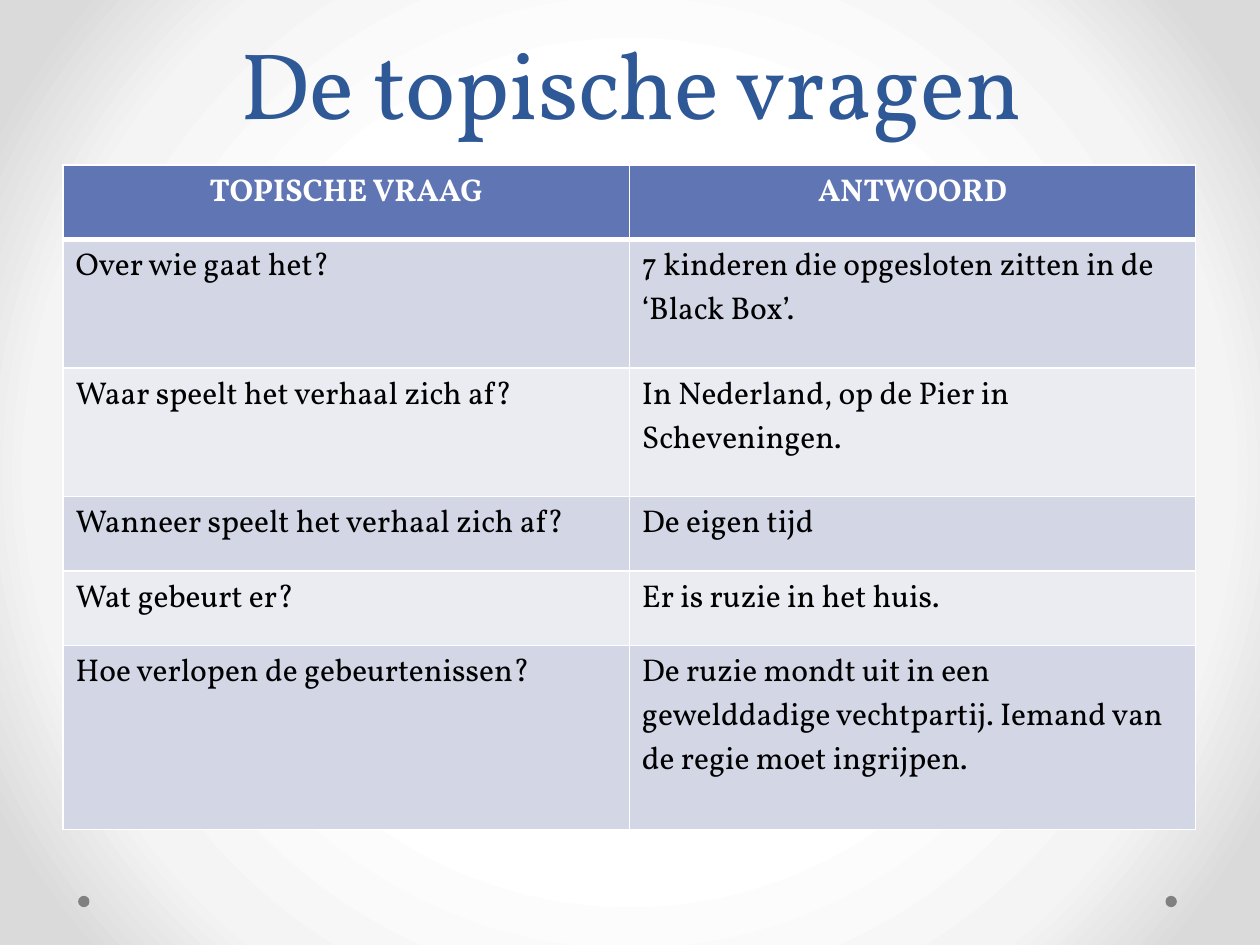
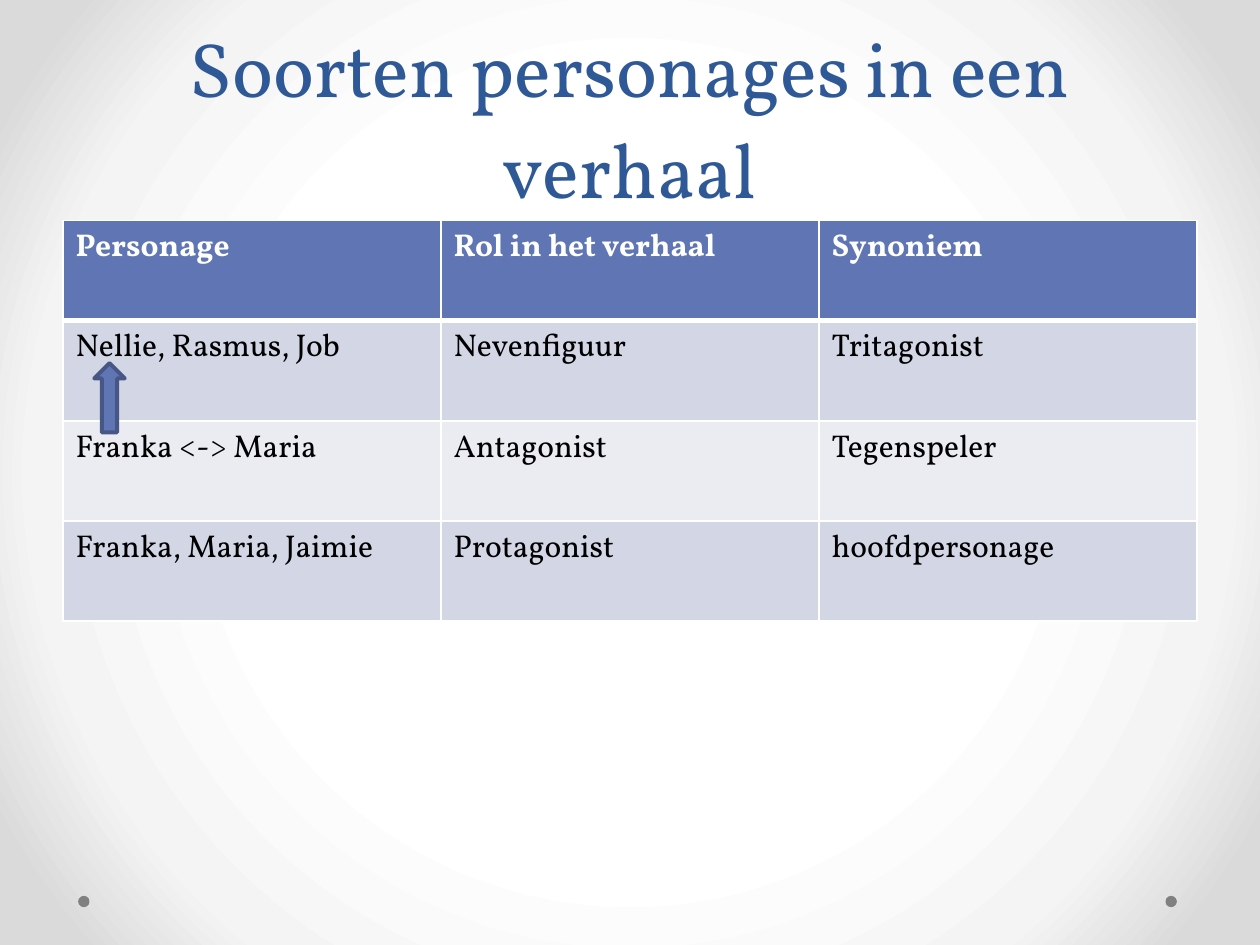
from collections import namedtuple

from lxml.etree import SubElement
from pptx import Presentation
from pptx.dml.color import RGBColor
from pptx.enum.shapes import MSO_SHAPE
from pptx.enum.text import MSO_ANCHOR, PP_ALIGN
from pptx.oxml import parse_xml
from pptx.oxml.ns import nsdecls, qn
from pptx.util import Inches, Pt

WIDTH, HEIGHT = Inches(10), Inches(7.5)
FONT = "Vollkorn"
TITLE_BLUE, HEADER_BLUE, ARROW_EDGE = "2F5897", "6076B4", "475785"
BANDS = ("D2D6E5", "EAECF2")
WHITE, BLACK, DOT_GREY = "FFFFFF", "000000", "808080"
GLOW = ((50, WHITE), (76, "F4F4F4"), (92, "DADADA"))

Box = namedtuple("Box", "left top width height")


def color(hex_code):
    return RGBColor.from_string(hex_code)


def percent_box(left, top, width, height):
    return Box(*(int(share * side / 100) for share, side in
                 zip((left, top, width, height), (WIDTH, HEIGHT) * 2)))


def box_within(outer, left, top, width, height):
    return Box(outer.left + int(outer.width * left / 100),
               outer.top + int(outer.height * top / 100),
               int(outer.width * width / 100),
               int(outer.height * height / 100))


def style_text(paragraph, size, hex_code, bold=False, align=PP_ALIGN.LEFT):
    paragraph.alignment = align
    font = paragraph.font
    font.name, font.size, font.bold = FONT, Pt(size), bold
    font.color.rgb = color(hex_code)


def add_filled_shape(slide, kind, box, fill, edge=None, edge_width=0):
    shape = slide.shapes.add_shape(kind, *box)
    shape.shadow.inherit = False
    shape.fill.solid()
    shape.fill.fore_color.rgb = color(fill)
    if edge:
        shape.line.color.rgb = color(edge)
        shape.line.width = Pt(edge_width)
    else:
        shape.line.fill.background()


def add_background(slide):
    stops = "".join(f'<a:gs pos="{position * 1000}"><a:srgbClr val="{tone}"/></a:gs>'
                    for position, tone in GLOW)
    slide.element.cSld.insert(0, parse_xml(
        f'<p:bg {nsdecls("p", "a")}><p:bgPr><a:gradFill rotWithShape="1">'
        f'<a:gsLst>{stops}</a:gsLst><a:path path="circle">'
        '<a:fillToRect l="50000" t="50000" r="50000" b="50000"/></a:path>'
        '</a:gradFill><a:effectLst/></p:bgPr></p:bg>'))


def add_footer_dots(slide):
    for left in (92.5, 6.2):
        add_filled_shape(slide, MSO_SHAPE.OVAL, percent_box(left, 94.8, 0.9, 1.2), DOT_GREY)


def add_title(slide, box, title, size):
    frame = slide.shapes.add_textbox(*box).text_frame
    frame.word_wrap = True
    frame.vertical_anchor = MSO_ANCHOR.BOTTOM
    paragraph = frame.paragraphs[0]
    paragraph.text = title
    paragraph.line_spacing = Pt(58)
    style_text(paragraph, size, TITLE_BLUE, align=PP_ALIGN.CENTER)


def add_cell_borders(cell, row):
    widths = {"lnL": 1, "lnR": 1, "lnT": 3 if row == 1 else 1, "lnB": 3 if row == 0 else 1}
    properties = cell._tc.get_or_add_tcPr()
    for side, width in widths.items():
        border = SubElement(properties, qn(f"a:{side}"), w=str(Pt(width)))
        SubElement(SubElement(border, qn("a:solidFill")), qn("a:srgbClr"), val=WHITE)


def add_banded_table(slide, box, rows, row_weights, header_align):
    table = slide.shapes.add_table(len(rows), len(rows[0]), *box).table
    table.horz_banding = False
    for column in table.columns:
        column.width = box.width // len(rows[0])
    for row, (texts, weight) in enumerate(zip(rows, row_weights)):
        table.rows[row].height = int(box.height * weight / sum(row_weights))
        is_header = row == 0
        for column, text in enumerate(texts):
            cell = table.cell(row, column)
            add_cell_borders(cell, row)
            cell.fill.solid()
            cell.fill.fore_color.rgb = color(HEADER_BLUE if is_header else BANDS[(row - 1) % 2])
            cell.text = text
            style_text(cell.text_frame.paragraphs[0], 18, WHITE if is_header else BLACK,
                       is_header, header_align if is_header else PP_ALIGN.LEFT)


def start_slide(deck):
    slide = deck.slides.add_slide(deck.slide_layouts[6])
    add_background(slide)
    add_footer_dots(slide)
    return slide


def build_questions(deck):
    slide = start_slide(deck)
    add_title(slide, percent_box(5.1, 1.73, 90, 13.6), "De topische vragen", 54)
    questions = (
        ("TOPISCHE VRAAG", "ANTWOORD"),
        ("Over wie gaat het?", "7 kinderen die opgesloten zitten in de ‘Black Box’."),
        ("Waar speelt het verhaal zich af?", "In Nederland, op de Pier in Scheveningen."),
        ("Wanneer speelt het verhaal zich af?", "De eigen tijd"),
        ("Wat gebeurt er?", "Er is ruzie in het huis."),
        ("Hoe verlopen de gebeurtenissen?",
         "De ruzie mondt uit in een gewelddadige vechtpartij. "
         "Iemand van de regie moet ingrijpen."),
    )
    add_banded_table(slide, percent_box(5, 17.47, 89.9, 70.3), questions,
                     (0.59, 1.02, 1.02, 0.59, 0.59, 1.46), PP_ALIGN.CENTER)


def build_characters(deck):
    slide = start_slide(deck)
    add_title(slide, percent_box(5, 0, 90, 23.33), "Soorten personages in een verhaal", 44)
    characters = (
        ("Personage", "Rol in het verhaal", "Synoniem"),
        ("Nellie, Rasmus, Job", "Nevenfiguur", "Tritagonist"),
        ("Franka <-> Maria", "Antagonist", "Tegenspeler"),
        ("Franka, Maria, Jaimie", "Protagonist", "hoofdpersonage"),
    )
    table_box = percent_box(5, 23.33, 90, 42.4)
    add_banded_table(slide, table_box, characters, (1,) * len(characters), PP_ALIGN.LEFT)
    add_filled_shape(slide, MSO_SHAPE.UP_ARROW, box_within(table_box, 2.75, 35.6, 2.7, 17.3),
                     HEADER_BLUE, ARROW_EDGE, 2.25)


def main():
    deck = Presentation()
    deck.slide_width, deck.slide_height = WIDTH, HEIGHT
    build_questions(deck)
    build_characters(deck)
    deck.save("out.pptx")


if __name__ == "__main__":
    main()
